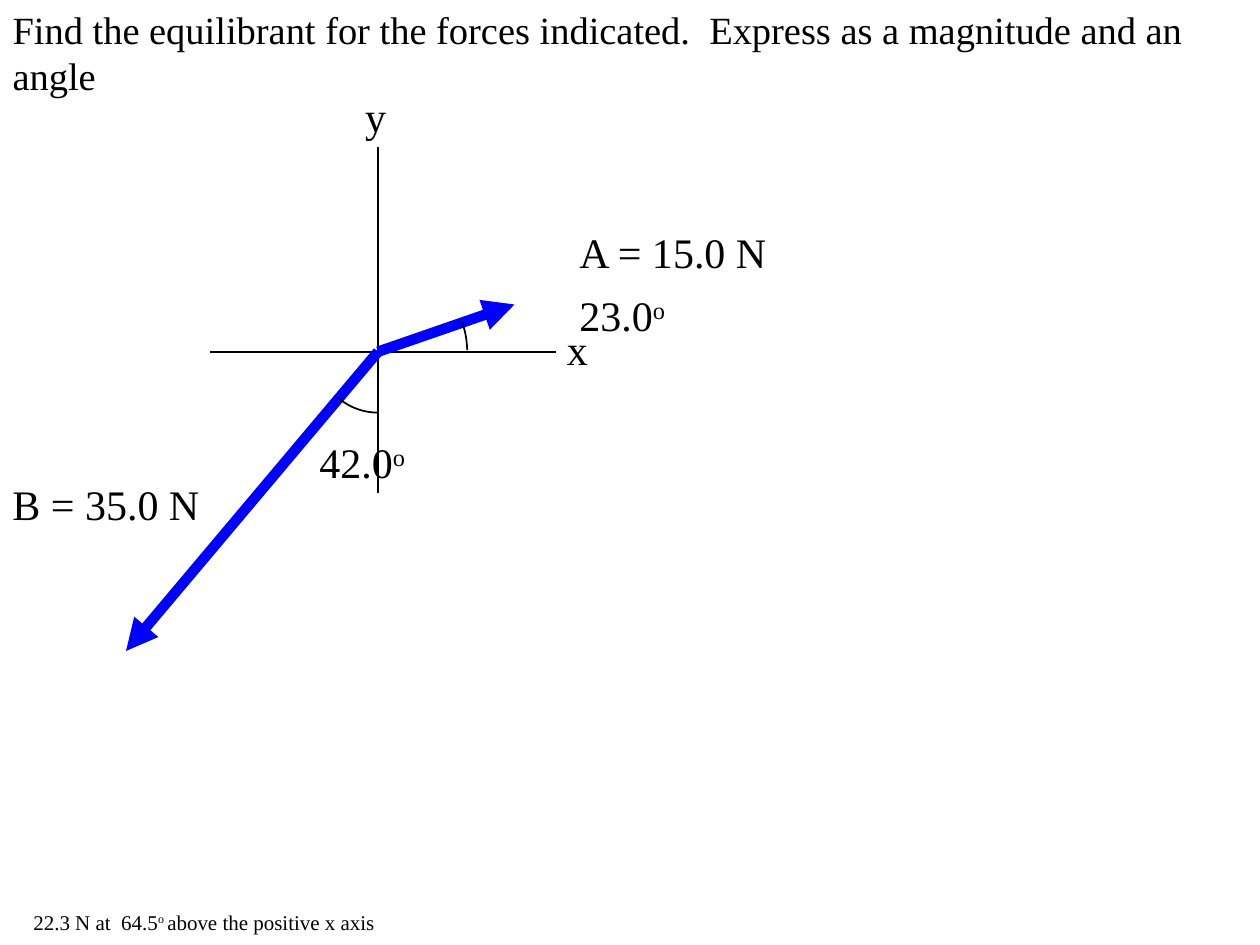
from math import atan2, degrees

from pptx import Presentation
from pptx.dml.color import RGBColor
from pptx.enum.shapes import MSO_CONNECTOR, MSO_SHAPE
from pptx.enum.text import MSO_ANCHOR, MSO_AUTO_SIZE, PP_ALIGN
from pptx.oxml.ns import qn
from pptx.util import Inches, Pt
from lxml.etree import SubElement

FONT = "Times New Roman"
BLACK = "000000"
BLUE = "0000FF"
HUB = (36, 33.5)
TIP_A = (49, 29)
TIP_B = (12, 62)


def grid(n):
    return Inches(n / 12)


def paint(color, hue):
    color.rgb = RGBColor.from_string(hue)


def write(frame, parts, size):
    para = frame.paragraphs[0]
    para.alignment = PP_ALIGN.LEFT
    for i, part in enumerate(parts):
        run = para.add_run()
        run.text = part
        if i % 2:
            run.font._element.set("baseline", "30000")
    para.font.name = FONT
    para.font.size = Pt(size)
    paint(para.font.color, BLACK)


def head(slide, text):
    title = slide.shapes.title
    title.left, title.top, title.width, title.height = 0, 0, grid(120), grid(10)
    frame = title.text_frame
    frame.word_wrap = True
    frame.auto_size = MSO_AUTO_SIZE.SHAPE_TO_FIT_TEXT
    frame.vertical_anchor = MSO_ANCHOR.TOP
    write(frame, [text], 22)


def label(slide, parts, x, y, wide, size=24, high=6):
    box = slide.shapes.add_textbox(grid(x), grid(y), grid(wide), grid(high))
    frame = box.text_frame
    frame.word_wrap = False
    frame.auto_size = MSO_AUTO_SIZE.SHAPE_TO_FIT_TEXT
    write(frame, parts, size)


def line(slide, start, end, hue=BLACK, width=1, arrow=False):
    ends = [grid(n) for n in (*start, *end)]
    link = slide.shapes.add_connector(MSO_CONNECTOR.STRAIGHT, *ends)
    paint(link.line.color, hue)
    link.line.width = Pt(width)
    if arrow:
        SubElement(link.line._get_or_add_ln(), qn("a:tailEnd"), type="triangle")
    SubElement(link._element.spPr, qn("a:effectLst"))


def turn(tip):
    return degrees(atan2(tip[1] - HUB[1], tip[0] - HUB[0])) % 360


def arc(slide, span, start, end):
    left, top = (grid(n - span) for n in HUB)
    curve = slide.shapes.add_shape(
        MSO_SHAPE.ARC, left, top, grid(2 * span), grid(2 * span))
    curve.adjustments[0] = start * 0.6
    curve.adjustments[1] = end * 0.6
    curve.fill.background()
    curve.shadow.inherit = False
    paint(curve.line.color, BLACK)
    curve.line.width = Pt(1)


def main():
    deck = Presentation()
    deck.slide_width, deck.slide_height = Inches(10), Inches(7.5)
    slide = deck.slides.add_slide(deck.slide_layouts[5])

    head(slide, "Find the equilibrant for the forces indicated.  "
                "Express as a magnitude and an angle")
    label(slide, ["22.3 N at  64.5", "o ", "above the positive x axis"],
          2, 86, 36, 12, 3.6)

    line(slide, (36, 14), (36, 47))
    line(slide, (53, 33.5), (20, 33.5))
    for tip in (TIP_A, TIP_B):
        line(slide, HUB, tip, BLUE, 6, True)

    for parts, x, y, wide in (
        (["A = 15.0 N"], 54, 21, 20.4),
        (["B = 35.0 N"], 0, 45, 20.3),
        (["23.0", "o"], 54, 27, 10.8),
        (["42.0", "o"], 29.25, 41, 10.8),
        (["y"], 33.6, 8, 4.4),
        (["x"], 52.8, 30.25, 4.4),
    ):
        label(slide, parts, x, y, wide)

    arc(slide, 5.8, 90, turn(TIP_B))
    arc(slide, 8.5, turn(TIP_A), 359)
    deck.save("out.pptx")


if __name__ == "__main__":
    main()
